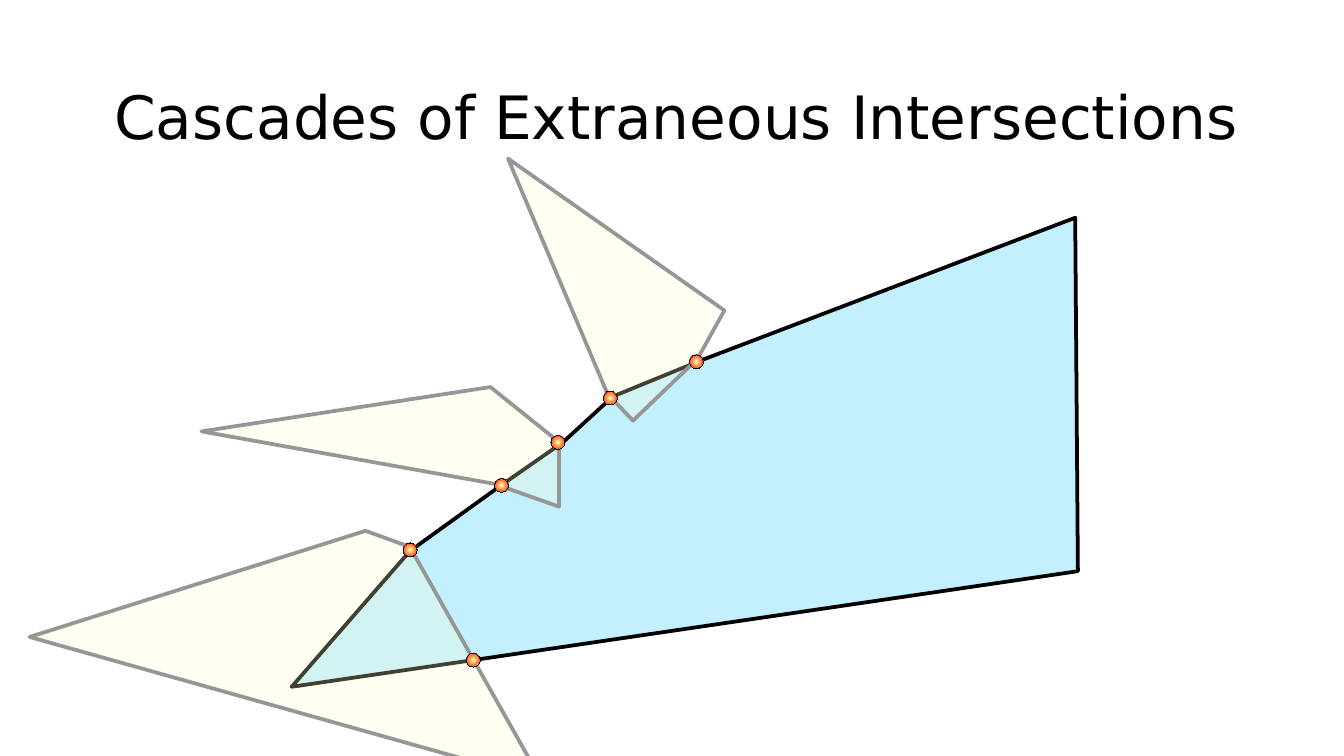
from lxml import etree
from pptx import Presentation
from pptx.dml.color import RGBColor
from pptx.enum.shapes import MSO_SHAPE
from pptx.enum.text import MSO_ANCHOR, MSO_AUTO_SIZE, PP_ALIGN
from pptx.oxml import parse_xml
from pptx.oxml.ns import nsdecls, qn
from pptx.util import Inches, Pt

OVAL = MSO_SHAPE.OVAL
TOP = MSO_ANCHOR.TOP
LEFT = PP_ALIGN.LEFT
FIXED = MSO_AUTO_SIZE.NONE

BLACK = RGBColor(0x00, 0x00, 0x00)
GREY = RGBColor(0x96, 0x96, 0x96)
SKY = RGBColor(0xC2, 0xF0, 0xFF)
CREAM = RGBColor(0xFF, 0xFF, 0xCC)
WHITE = RGBColor(0xFF, 0xFF, 0xFF)
AMBER = RGBColor(0xFF, 0xCC, 0x66)
RED = RGBColor(0xFF, 0x00, 0x00)

WIDTH = Inches(10)
HEIGHT = WIDTH * 9 // 16
COLS = 1000
CELL = WIDTH // COLS
GLOW = [(1, WHITE), (21, AMBER), (100, RED)]

REGION = [(217, 511), (305, 410), (373, 361), (419, 329),
          (456, 295), (522, 268), (800, 162), (802, 425)]
WEDGES = [
    [(22, 474), (403, 581), (305, 407), (272, 395)],
    [(150, 321), (368, 360), (416, 377), (416, 329), (365, 288)],
    [(378, 118), (452, 293), (471, 313), (519, 267), (539, 231)],
]
CROSSINGS = [(347, 486), (300, 404), (368, 356), (410, 324), (449, 291), (513, 264)]


def write(frame, text, *, font, size, color, align=LEFT, anchor=TOP):
    frame.auto_size = FIXED
    frame.word_wrap = True
    frame.vertical_anchor = anchor
    para = frame.paragraphs[0]
    para.alignment = align
    run = para.add_run()
    run.text = text
    run.font.name = font
    run.font.size = Pt(size)
    run.font.color.rgb = color


class Board:
    font = "DejaVu Sans"
    stroke = 2
    dot_size = 10.4

    def __init__(self, slide):
        self.slide = slide

    def title(self, text, left, top, width, height):
        shape = self.slide.shapes.title
        shape.left, shape.top = left * CELL, top * CELL
        shape.width, shape.height = width * CELL, height * CELL
        write(shape.text_frame, text, font=self.font, size=32, color=BLACK)

    def outline(self, shape, color, width):
        shape.shadow.inherit = False
        shape.line.color.rgb = color
        line = shape.element.spPr.find(qn("a:ln"))
        line.set("w", str(Pt(width)))
        return line

    def area(self, points, fill, line, alpha=None):
        pen = self.slide.shapes.build_freeform(*points[0], scale=CELL)
        pen.add_line_segments(points[1:], close=True)
        shape = pen.convert_to_shape()
        shape.fill.solid()
        shape.fill.fore_color.rgb = fill
        edge = self.outline(shape, line, self.stroke)
        etree.SubElement(edge, qn("a:round"))
        if alpha is not None:
            tone = shape.element.spPr.find(qn("a:solidFill"))[0]
            etree.SubElement(tone, qn("a:alpha")).set("val", str(alpha * 1000))

    def dot(self, left, top):
        side = int(self.dot_size * CELL)
        shape = self.slide.shapes.add_shape(OVAL, left * CELL, top * CELL, side, side)
        self.outline(shape, BLACK, 0)
        stops = "".join(
            f'<a:gs pos="{share * 1000}"><a:srgbClr val="{color}"/></a:gs>'
            for share, color in GLOW)
        glow = parse_xml(
            f'<a:gradFill {nsdecls("a")}><a:gsLst>{stops}</a:gsLst>'
            '<a:path path="circle"><a:fillToRect l="50000" t="50000" '
            'r="50000" b="50000"/></a:path></a:gradFill>')
        shape.element.spPr.find(qn("a:prstGeom")).addnext(glow)


def main():
    deck = Presentation()
    deck.slide_width, deck.slide_height = WIDTH, HEIGHT
    board = Board(deck.slides.add_slide(deck.slide_layouts[5]))
    board.title("Cascades of Extraneous Intersections", 75, 54, 891, 102)
    board.area(REGION, SKY, BLACK)
    for wedge in WEDGES:
        board.area(wedge, CREAM, GREY, alpha=25)
    for left, top in CROSSINGS:
        board.dot(left, top)
    deck.save("out.pptx")


if __name__ == "__main__":
    main()
